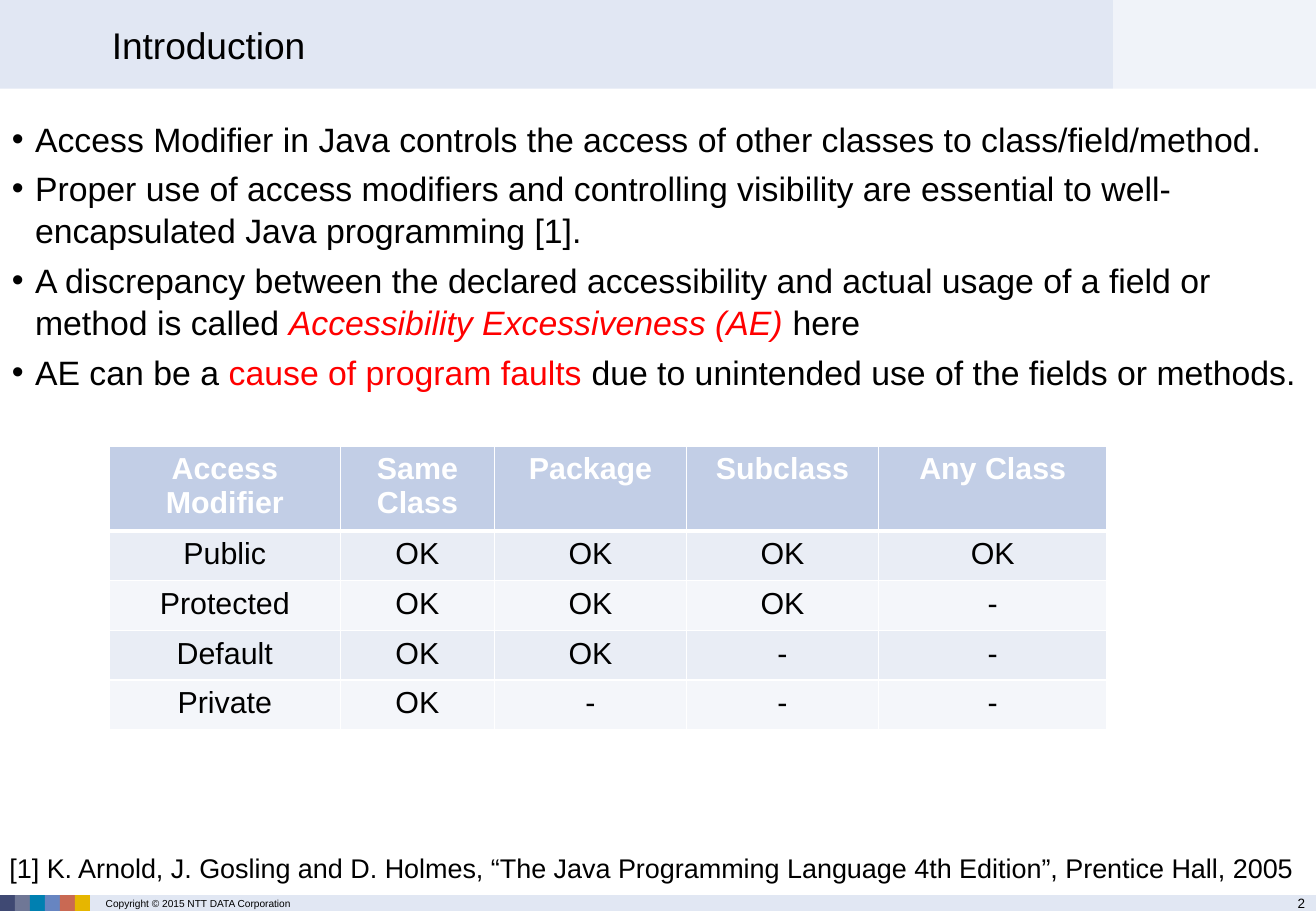
from lxml import etree
from pptx import Presentation
from pptx.dml.color import RGBColor
from pptx.enum.shapes import MSO_SHAPE
from pptx.enum.text import MSO_ANCHOR, PP_ALIGN
from pptx.oxml.ns import qn
from pptx.util import Inches, Pt

RECT = MSO_SHAPE.RECTANGLE
TOP, MIDDLE = MSO_ANCHOR.TOP, MSO_ANCHOR.MIDDLE
LEFT, CENTER, RIGHT = PP_ALIGN.LEFT, PP_ALIGN.CENTER, PP_ALIGN.RIGHT

BLACK = RGBColor(0, 0, 0)
WHITE = RGBColor(255, 255, 255)
RED = RGBColor(255, 0, 0)
PALE = RGBColor(0xE1, 0xE7, 0xF3)
FAINT = RGBColor(0xF0, 0xF3, 0xF9)
HEAD = RGBColor(0xC2, 0xCE, 0xE6)
BANDS = (RGBColor(0xE9, 0xED, 0xF5), RGBColor(0xF4, 0xF6, 0xFA))
STRIPE = [RGBColor.from_string(code) for code in
          ("3F4973", "6F7796", "0080B1", "6785C1", "C96953", "E6B600")]

FONT = "Arial"
WIDE, HIGH = 10.83, 7.5
HINT = {"color": RED}
TERM = {"color": RED, "italic": True}

POINTS = [
    [("Access Modifier in Java controls the access of other classes to class/field/method.", {})],
    [("Proper use of access modifiers and controlling visibility are essential to "
      "well-encapsulated Java programming [1].", {})],
    [("A discrepancy between the declared accessibility and actual usage of a field or "
      "method is called ", {}),
     ("Accessibility Excessiveness (AE) ", TERM), ("here", {})],
    [("AE can be a ", {}), ("cause of program faults ", HINT),
     ("due to unintended use of the fields or methods.", {})],
]
GRID = [
    ("Access Modifier", "Same Class", "Package", "Subclass", "Any Class"),
    ("Public", "OK", "OK", "OK", "OK"),
    ("Protected", "OK", "OK", "OK", "-"),
    ("Default", "OK", "OK", "-", "-"),
    ("Private", "OK", "-", "-", "-"),
]
COLS = (1.9, 1.27, 1.58, 1.58, 1.88)
CITE = ("[1] K. Arnold, J. Gosling and D. Holmes, “The Java Programming Language "
        "4th Edition”, Prentice Hall, 2005")


def write(para, text, size=18, color=BLACK, bold=False, italic=False, align=LEFT):
    para.alignment = align
    run = para.add_run()
    run.text = text
    font = run.font
    font.name, font.size = FONT, Pt(size)
    font.bold, font.italic = bold, italic
    font.color.rgb = color


def frame(slide, x, y, w, h, inset=(0.1, 0.05), anchor=TOP):
    text = slide.shapes.add_textbox(Inches(x), Inches(y), Inches(w), Inches(h)).text_frame
    text.word_wrap = True
    text.vertical_anchor = anchor
    text.margin_left = text.margin_right = Inches(inset[0])
    text.margin_top = text.margin_bottom = Inches(inset[1])
    return text


def block(slide, x, y, w, h, color):
    shape = slide.shapes.add_shape(RECT, Inches(x), Inches(y), Inches(w), Inches(h))
    shape.shadow.inherit = False
    shape.fill.solid()
    shape.fill.fore_color.rgb = color
    shape.line.fill.background()


def banner(slide, x, y, w, h):
    main = 9.16
    block(slide, x, y, main, h, PALE)
    block(slide, x + main, y, w - main, h, FAINT)
    title = frame(slide, x + 0.74, y, 8.34, h, (0.18, 0.05), MIDDLE)
    write(title.paragraphs[0], "Introduction", size=22)


def footer(slide, x, y, w, h):
    block(slide, x, y, w, h, PALE)
    step = 0.74 / len(STRIPE)
    for i, color in enumerate(STRIPE):
        block(slide, x + i * step, y, step, h, color)
    note = frame(slide, x + 0.78, y + 0.02, 2.39, 0.1, (0.09, 0))
    write(note.paragraphs[0], "Copyright © 2015 NTT DATA Corporation", size=6)
    page = frame(slide, x + w - 0.69, y, 0.69, h, (0.09, 0))
    write(page.paragraphs[0], "2", size=8, align=RIGHT)


def bullet(para):
    props = para._p.get_or_add_pPr()
    props.set("marL", str(Inches(0.19)))
    props.set("indent", str(-Inches(0.19)))
    etree.SubElement(props, qn("a:buFont")).set("typeface", FONT)
    etree.SubElement(props, qn("a:buChar")).set("char", "•")


def points(slide, x, y, w, h):
    body = frame(slide, x, y, w, h)
    for i, runs in enumerate(POINTS):
        para = body.add_paragraph() if i else body.paragraphs[0]
        para.line_spacing = 1.05
        if i:
            para.space_before = Pt(4)
        bullet(para)
        for text, style in runs:
            write(para, text, size=20, **style)


def border(cell, top, bottom):
    props = cell._tc.get_or_add_tcPr()
    sides = (("lnL", 1), ("lnR", 1), ("lnT", top), ("lnB", bottom))
    for i, (side, width) in enumerate(sides):
        line = etree.Element(qn("a:" + side), w=str(Pt(width)))
        fill = etree.SubElement(line, qn("a:solidFill"))
        etree.SubElement(fill, qn("a:srgbClr")).set("val", str(WHITE))
        props.insert(i, line)


def access(slide, x, y, w, h):
    row = 0.41
    table = slide.shapes.add_table(len(GRID), len(COLS), Inches(x), Inches(y),
                                   Inches(w), Inches(h)).table
    for col, width in zip(table.columns, COLS):
        col.width = Inches(width)
    for r, texts in enumerate(GRID):
        table.rows[r].height = Inches(row if r else h - row * (len(GRID) - 1))
        for c, text in enumerate(texts):
            cell = table.cell(r, c)
            cell.margin_left = cell.margin_right = Inches(0.11)
            cell.margin_top = cell.margin_bottom = Inches(0.05)
            cell.fill.solid()
            cell.fill.fore_color.rgb = BANDS[(r - 1) % 2] if r else HEAD
            border(cell, 3 if r == 1 else 1, 1 if r else 3)
            write(cell.text_frame.paragraphs[0], text, bold=r == 0,
                  color=BLACK if r else WHITE, align=CENTER)


def source(slide, x, y, w, h):
    write(frame(slide, x, y, w, h).paragraphs[0], CITE, size=16)


def main():
    deck = Presentation()
    deck.slide_width, deck.slide_height = Inches(WIDE), Inches(HIGH)
    slide = deck.slides.add_slide(deck.slide_layouts[6])
    banner(slide, 0, 0, WIDE, 0.73)
    footer(slide, 0, HIGH - 0.13, WIDE, 0.13)
    points(slide, 0, 0.91, WIDE, 2.5)
    access(slide, 0.9, 3.67, sum(COLS), 2.28)
    source(slide, -0.02, 6.96, WIDE, 0.37)
    deck.save("out.pptx")


if __name__ == "__main__":
    main()
